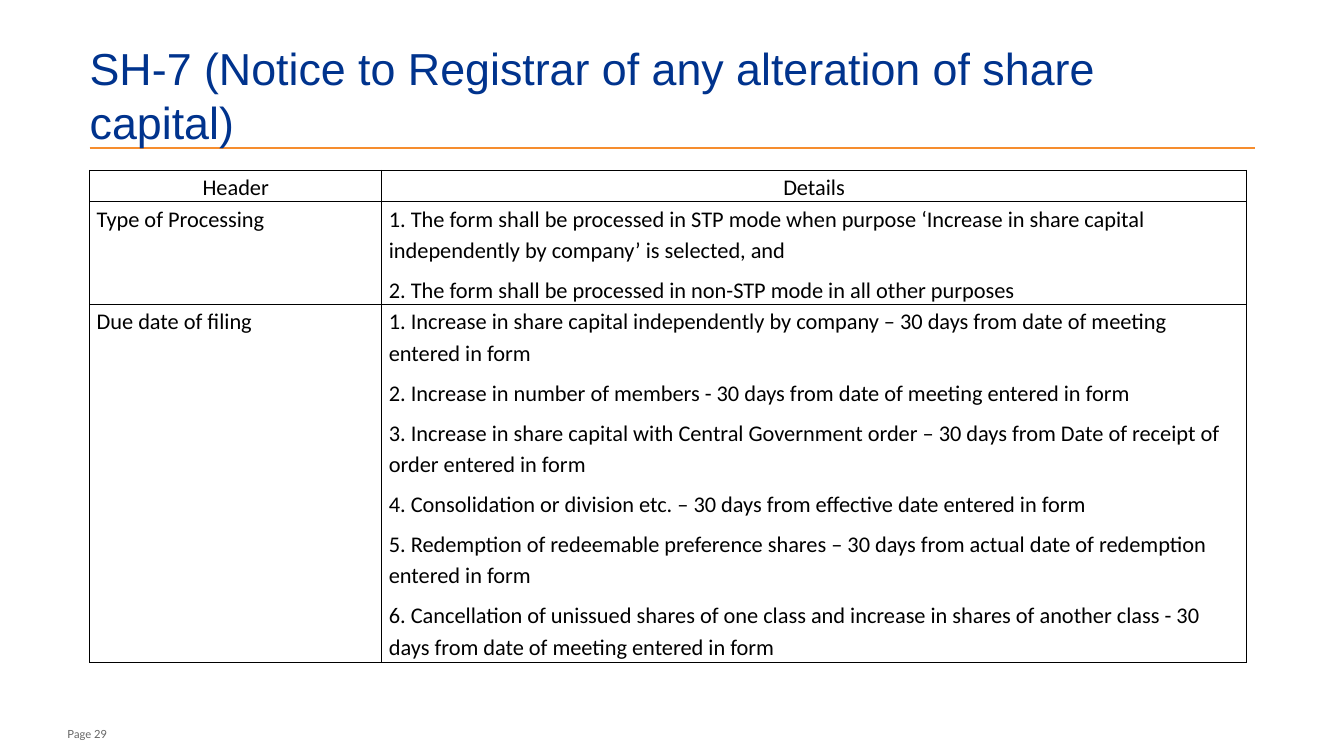
from lxml import etree
from pptx import Presentation
from pptx.dml.color import RGBColor
from pptx.enum import shapes, text
from pptx.oxml.ns import qn
from pptx.util import Inches, Pt

BLACK = "000000"
ROWS = [
    (0.31, ["Header"], ["Details"]),
    (1.02, ["Type of Processing"], [
        "1. The form shall be processed in STP mode when purpose ‘Increase in share capital "
        "independently by company’ is selected, and",
        "2. The form shall be processed in non-STP mode in all other purposes",
    ]),
    (3.55, ["Due date of filing"], [
        "1. Increase in share capital independently by company – 30 days from date of meeting "
        "entered in form",
        "2. Increase in number of members - 30 days from date of meeting entered in form",
        "3. Increase in share capital with Central Government order – 30 days from Date of "
        "receipt of order entered in form",
        "4. Consolidation or division etc. – 30 days from effective date entered in form",
        "5. Redemption of redeemable preference shares – 30 days from actual date of "
        "redemption entered in form",
        "6. Cancellation of unissued shares of one class and increase in shares of another "
        "class - 30 days from date of meeting entered in form",
    ]),
]


def color(value):
    return RGBColor.from_string(value)


def add_label(words, left, top, width, height, anchor, font, size, fill):
    """Add a text box without margins holding one styled paragraph."""
    frame = page.shapes.add_textbox(
        Inches(left), Inches(top), Inches(width), Inches(height)).text_frame
    frame.word_wrap = True
    frame.vertical_anchor = anchor
    frame.margin_left = frame.margin_right = frame.margin_top = frame.margin_bottom = 0
    frame.text = words
    span = frame.paragraphs[0].runs[0]
    span.font.name, span.font.size = font, Pt(size)
    span.font.color.rgb = color(fill)


deck = Presentation()
deck.slide_width, deck.slide_height = Inches(13.34), Inches(7.5)
page = deck.slides.add_slide(deck.slide_layouts[6])

add_label("Page 29", 0.67, 7.13, 0.97, 0.22,
          text.MSO_ANCHOR.BOTTOM, "Lato", 8, "646464")

rule = page.shapes.add_connector(
    shapes.MSO_CONNECTOR.STRAIGHT, Inches(0.89), Inches(1.47), Inches(12.46), Inches(1.47))
rule.line.color.rgb = color("F68D2E")
rule.line.width = Pt(1)
etree.SubElement(rule._element.spPr, qn("a:effectLst"))

add_label("SH-7 (Notice to Registrar of any alteration of share capital)",
          0.89, 0.4, 11.54, 1.07, text.MSO_ANCHOR.MIDDLE, "Arial", 32, "00338D")

table = page.shapes.add_table(
    len(ROWS), 2, Inches(0.89), Inches(1.69), Inches(11.48), Inches(4.88)).table
table.first_row = table.horz_banding = False
table.columns[0].width, table.columns[1].width = Inches(2.9), Inches(8.58)

for row_index, (height, *contents) in enumerate(ROWS):
    table.rows[row_index].height = Inches(height)
    for column_index, lines in enumerate(contents):
        cell = table.cell(row_index, column_index)
        cell.margin_left = cell.margin_right = Inches(0.07)
        cell.margin_top = cell.margin_bottom = 0
        cell.text_frame.text = "\n".join(lines)
        for line_index, para in enumerate(cell.text_frame.paragraphs):
            para.line_spacing = 1.15
            if line_index:
                para.space_before = Pt(6)
            if row_index == 0:
                para.alignment = text.PP_ALIGN.CENTER
            span = para.runs[0]
            span.font.name, span.font.size = "Calibri", Pt(16)
            span.font.color.rgb = color(BLACK)
        properties = cell._tc.get_or_add_tcPr()
        for side in ("lnL", "lnR", "lnT", "lnB"):
            border = etree.SubElement(properties, qn(f"a:{side}"), w=str(Pt(1)))
            fill = etree.SubElement(border, qn("a:solidFill"))
            etree.SubElement(fill, qn("a:srgbClr"), val=BLACK)
        cell.fill.background()

deck.save("out.pptx")
